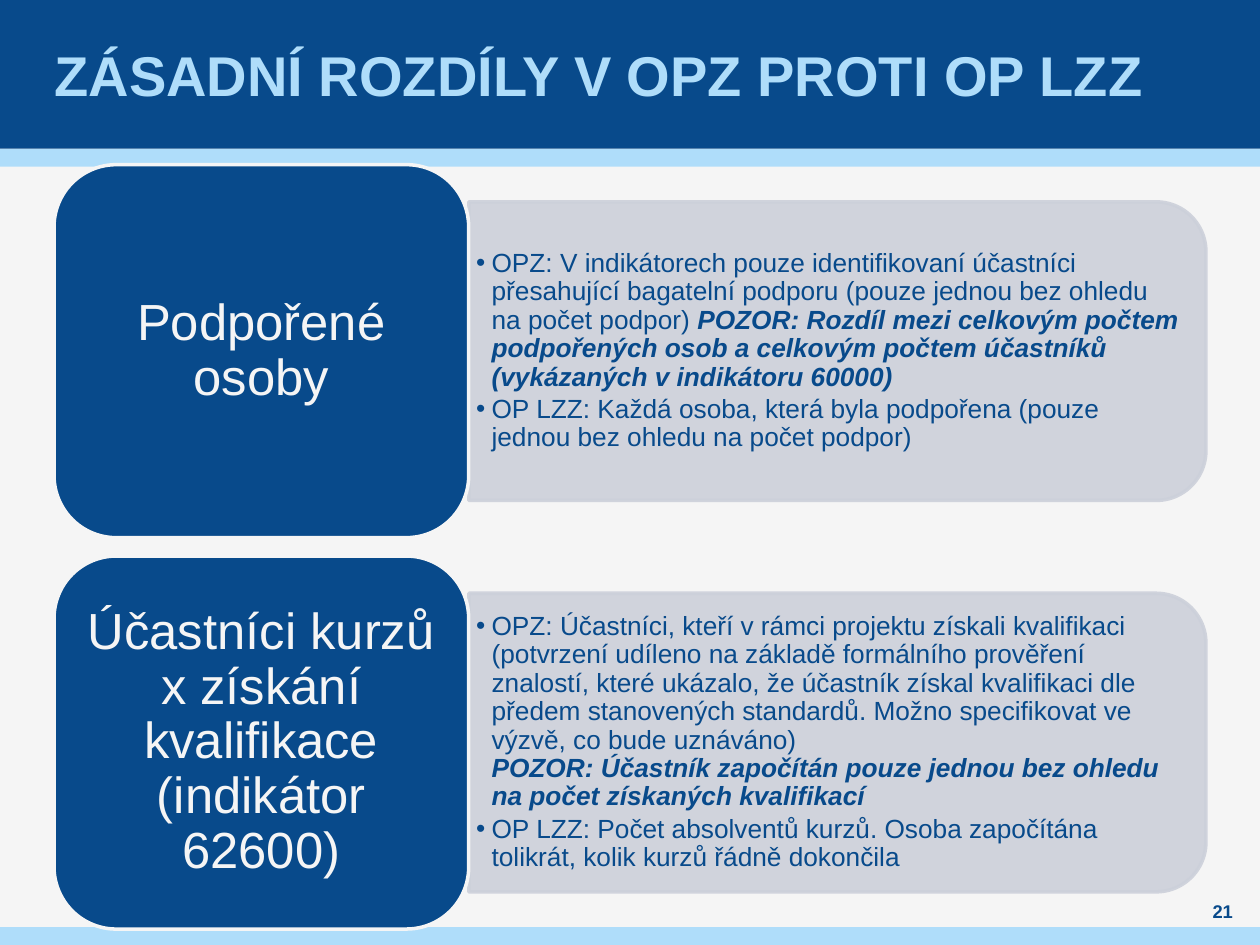
import pptx
import pptx.util
import pptx.dml.color
import pptx.enum.shapes
import pptx.enum.text
import pptx.oxml.ns
import lxml.etree

Cm, Pt = pptx.util.Cm, pptx.util.Pt
SHAPE = pptx.enum.shapes.MSO_SHAPE
ALIGN = pptx.enum.text.PP_ALIGN
MIDDLE = pptx.enum.text.MSO_ANCHOR.MIDDLE
qn = pptx.oxml.ns.qn

COLORS = {"navy": "084A8B", "sky": "AFDDFA", "paper": "F5F5F5", "panel": "CCD0DA"}
TITLE = "ZÁSADNÍ ROZDÍLY V OPZ PROTI OP LZZ"
PAGE = "21"

# Each row: label, then bullets made of (text, emphasised) runs; "\n" is a line break
ROWS = [
    ("Podpořené osoby", [
        [("OPZ: V indikátorech pouze identifikovaní účastníci přesahující bagatelní "
          "podporu (pouze jednou bez ohledu na počet podpor) ", False),
         ("POZOR: Rozdíl mezi celkovým počtem podpořených osob a celkovým počtem "
          "účastníků (vykázaných v indikátoru 60000)", True)],
        [("OP LZZ: Každá osoba, která byla podpořena (pouze jednou bez ohledu na "
          "počet podpor)", False)],
    ]),
    ("Účastníci kurzů x získání kvalifikace (indikátor 62600)", [
        [("OPZ: Účastníci, kteří v rámci projektu získali kvalifikaci (potvrzení "
          "udíleno na základě formálního prověření znalostí, které ukázalo, že "
          "účastník získal kvalifikaci dle předem stanovených standardů. Možno "
          "specifikovat ve výzvě, co bude uznáváno)", False),
         ("\n", False),
         ("POZOR: Účastník započítán pouze jednou bez ohledu na počet získaných "
          "kvalifikací", True)],
        [("OP LZZ: Počet absolventů kurzů. Osoba započítána tolikrát, kolik kurzů "
          "řádně dokončila", False)],
    ]),
]

# Top, height and colour of the full-width bands, in cm
BANDS = [(3, 0.36, "sky"), (0, 3, "navy"), (18.69, 0.36, "sky")]
SLIDE_W, SLIDE_H = 25.4, 19.05
ROW_MIDDLE, ROW_PITCH = 7.08, 7.89
BOX_X, BOX_W, BOX_H = 1.09, 8.36, 7.52
PANEL_X, PANEL_W, PANEL_H = BOX_X + BOX_W, 14.86, 6.02
LIST_W, LIST_H = 14.55, 5.44


def rgb(name):
    return pptx.dml.color.RGBColor.from_string(COLORS[name])


def place(sp, x, y, w, h):
    sp.left, sp.top, sp.width, sp.height = Cm(x), Cm(y), Cm(w), Cm(h)


def bring_to_front(sp):
    sp.element.getparent().append(sp.element)


def add_shape(s, kind, x, y, w, h, fill, line=None):
    sp = s.shapes.add_shape(kind, Cm(x), Cm(y), Cm(w), Cm(h))
    sp.shadow.inherit = False
    sp.fill.solid()
    sp.fill.fore_color.rgb = rgb(fill)
    if line:
        sp.line.color.rgb = rgb(line)
        sp.line.width = Pt(2)
    else:
        sp.line.fill.background()
    return sp


def set_frame(tf, side, top):
    tf.word_wrap = True
    tf.auto_size = pptx.enum.text.MSO_AUTO_SIZE.NONE
    tf.vertical_anchor = MIDDLE
    tf.margin_left = tf.margin_right = Cm(side)
    tf.margin_top = tf.margin_bottom = Cm(top)


def add_run(p, text, size, color, bold=False, italic=False):
    r = p.add_run()
    r.text = text
    r.font.name = "Arial"
    r.font.size = Pt(size)
    r.font.color.rgb = rgb(color)
    r.font.bold, r.font.italic = bold, italic


def add_break(p, size):
    """Add a line break that keeps the text size of its line."""
    p.add_line_break()
    br = p._p.findall(qn("a:br"))[-1]
    lxml.etree.SubElement(br, qn("a:rPr"), sz=str(size * 100))


def add_panel(s, middle):
    """Add the panel rounded on its right: an upright shape turned by 90 degrees."""
    sp = add_shape(s, SHAPE.ROUND_2_SAME_RECTANGLE,
                   PANEL_X + (PANEL_W - PANEL_H) / 2, middle - PANEL_W / 2,
                   PANEL_H, PANEL_W, "panel", "panel")
    sp.rotation = 90
    for color in sp.element.spPr.iter(qn("a:srgbClr")):
        lxml.etree.SubElement(color, qn("a:alpha"), val="90000")


def fill_list(sp, bullets, middle):
    place(sp, PANEL_X, middle - LIST_H / 2, LIST_W, LIST_H)
    bring_to_front(sp)
    tf = sp.text_frame
    set_frame(tf, 0.15, 0.08)
    for i, runs in enumerate(bullets):
        p = tf.add_paragraph() if i else tf.paragraphs[0]
        p.line_spacing = 0.9
        p.space_before, p.space_after = Pt(0), Pt(2.25)
        pPr = p._p.get_or_add_pPr()
        pPr.set("marL", str(Cm(0.31)))
        pPr.set("indent", str(-Cm(0.31)))
        lxml.etree.SubElement(pPr, qn("a:buChar"), char="•")
        for text, strong in runs:
            if text == "\n":
                add_break(p, 15)
            else:
                add_run(p, text, 15, "navy", strong, strong)


def add_label(s, text, middle):
    sp = add_shape(s, SHAPE.ROUNDED_RECTANGLE, BOX_X, middle - BOX_H / 2,
                   BOX_W, BOX_H, "navy", "paper")
    set_frame(sp.text_frame, 0.3, 0.15)
    p = sp.text_frame.paragraphs[0]
    p.alignment = ALIGN.CENTER
    p.line_spacing = 0.9
    add_run(p, text, 29, "paper")


def main():
    prs = pptx.Presentation()
    prs.slide_width, prs.slide_height = Cm(SLIDE_W), Cm(SLIDE_H)
    s = prs.slides.add_slide(prs.slide_layouts.get_by_name("Two Content"))
    s.background.fill.solid()
    s.background.fill.fore_color.rgb = rgb("paper")
    title, *lists = s.placeholders

    for y, h, color in BANDS:
        add_shape(s, SHAPE.RECTANGLE, 0, y, SLIDE_W, h, color)

    place(title, 1, 0, 23.39, 3)
    bring_to_front(title)
    set_frame(title.text_frame, 0.1, 0)
    p = title.text_frame.paragraphs[0]
    p.alignment = ALIGN.LEFT
    add_run(p, TITLE, 32, "sky", bold=True)

    for i, (body, (label, bullets)) in enumerate(zip(lists, ROWS)):
        middle = ROW_MIDDLE + i * ROW_PITCH
        add_panel(s, middle)
        fill_list(body, bullets, middle)
        add_label(s, label, middle)

    number = s.shapes.add_textbox(Cm(24), Cm(18.11), Cm(1.3), Cm(0.51))
    set_frame(number.text_frame, 0, 0)
    p = number.text_frame.paragraphs[0]
    p.alignment = ALIGN.CENTER
    add_run(p, PAGE, 10.5, "navy", bold=True)

    prs.save("out.pptx")


if __name__ == "__main__":
    main()
